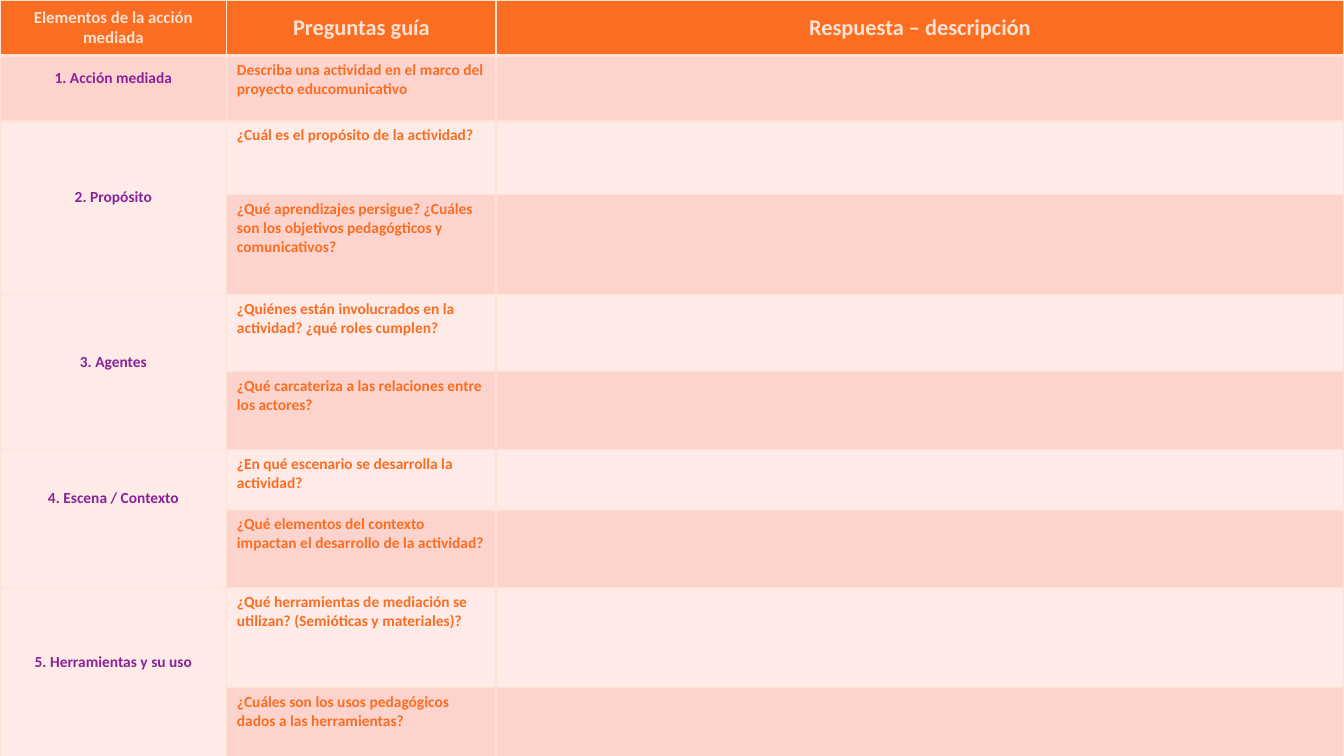
from lxml import etree
from pptx import Presentation
from pptx.dml.color import RGBColor
from pptx.enum.text import MSO_ANCHOR, PP_ALIGN
from pptx.oxml.ns import qn
from pptx.util import Inches, Pt

TOP, MIDDLE = MSO_ANCHOR.TOP, MSO_ANCHOR.MIDDLE
LEFT, CENTER = PP_ALIGN.LEFT, PP_ALIGN.CENTER
CREAM = RGBColor(0xFE, 0xE2, 0xD3)
ORANGE = RGBColor(0xFB, 0x6D, 0x21)
PURPLE = RGBColor(0x88, 0x23, 0x99)
PINK = RGBColor(0xFD, 0xD4, 0xCD)
PALE = RGBColor(0xFE, 0xEB, 0xE8)

COLS = [2.25, 2.67, 8.41]
ROWS = [0.55, 0.65, 0.73, 0.99, 0.77, 0.77, 0.6, 0.77, 0.99, 0.7]
HEADERS = [("Elementos de la acción mediada", 12), ("Preguntas guía", 16),
           ("Respuesta – descripción", 16)]
ELEMENTS = [
    ("1. Acción mediada", 0.25,
     ["Describa una actividad en el marco del proyecto educomunicativo"]),
    ("2. Propósito", 0.25,
     ["¿Cuál es el propósito de la actividad?",
      "¿Qué aprendizajes persigue? ¿Cuáles son los objetivos pedagógticos y comunicativos?"]),
    ("3. Agentes", 0.25,
     ["¿Quiénes están involucrados en la actividad? ¿qué roles cumplen?",
      "¿Qué carcateriza a las relaciones entre los actores?"]),
    ("4. Escena / Contexto", 0.45,
     ["¿En qué escenario se desarrolla la actividad?",
      "¿Qué elementos del contexto impactan el desarrollo de la actividad?"]),
    ("5. Herramientas y su uso", 0.25,
     ["¿Qué herramientas de mediación se utilizan? (Semióticas y materiales)?",
      "¿Cuáles son los usos pedagógicos dados a las herramientas?"]),
]


class Deck:
    """Holds the presentation, its style and the current slide."""

    def __init__(self, font):
        self.font = font
        self.prs = Presentation()
        self.prs.slide_width, self.prs.slide_height = Inches(13.33), Inches(7.5)
        self.s = self.prs.slides.add_slide(self.prs.slide_layouts[6])
        self.s.background.fill.solid()
        self.s.background.fill.fore_color.rgb = CREAM

    def table(self, cols, rows):
        frame = self.s.shapes.add_table(len(rows), len(cols), 0, 0,
                                        Inches(sum(cols)), Inches(sum(rows)))
        for column, width in zip(frame.table.columns, cols):
            column.width = Inches(width)
        for row, height in zip(frame.table.rows, rows):
            row.height = Inches(height)
        return frame.table

    def paint(self, cell, color, top=1, bottom=1):
        cell.fill.solid()
        cell.fill.fore_color.rgb = color
        tcPr = cell._tc.get_or_add_tcPr()
        for i, (side, width) in enumerate(zip("LRTB", (1, 1, top, bottom))):
            ln = etree.Element(qn("a:ln" + side), w=str(Pt(width)))
            fill = etree.SubElement(ln, qn("a:solidFill"))
            etree.SubElement(fill, qn("a:srgbClr"), val=str(CREAM))
            tcPr.insert(i, ln)

    def label(self, cell, text, size, color, align=CENTER, anchor=MIDDLE, bottom=0.05):
        cell.vertical_anchor = anchor
        cell.margin_bottom = Inches(bottom)
        p = cell.text_frame.paragraphs[0]
        p.text = text
        p.alignment = align
        font = p.runs[0].font
        font.name, font.size, font.bold = self.font, Pt(size), True
        font.color.rgb = color


def main():
    deck = Deck("Calibri")
    table = deck.table(COLS, ROWS)
    for c, (text, size) in enumerate(HEADERS):
        deck.paint(table.cell(0, c), ORANGE, bottom=3)
        deck.label(table.cell(0, c), text, size, CREAM)

    for r in range(1, len(ROWS)):
        for c in range(len(COLS)):
            color = PINK if r == 1 or (c and r % 2) else PALE
            deck.paint(table.cell(r, c), color, top=3 if r == 1 else 1)

    row = 1
    for name, bottom, questions in ELEMENTS:
        cell = table.cell(row, 0)
        if len(questions) > 1:
            cell.merge(table.cell(row + len(questions) - 1, 0))
        deck.label(cell, name, 11, PURPLE, bottom=bottom)
        for question in questions:
            deck.label(table.cell(row, 1), question, 11, ORANGE, LEFT, TOP)
            row += 1
    deck.prs.save("out.pptx")


if __name__ == "__main__":
    main()
